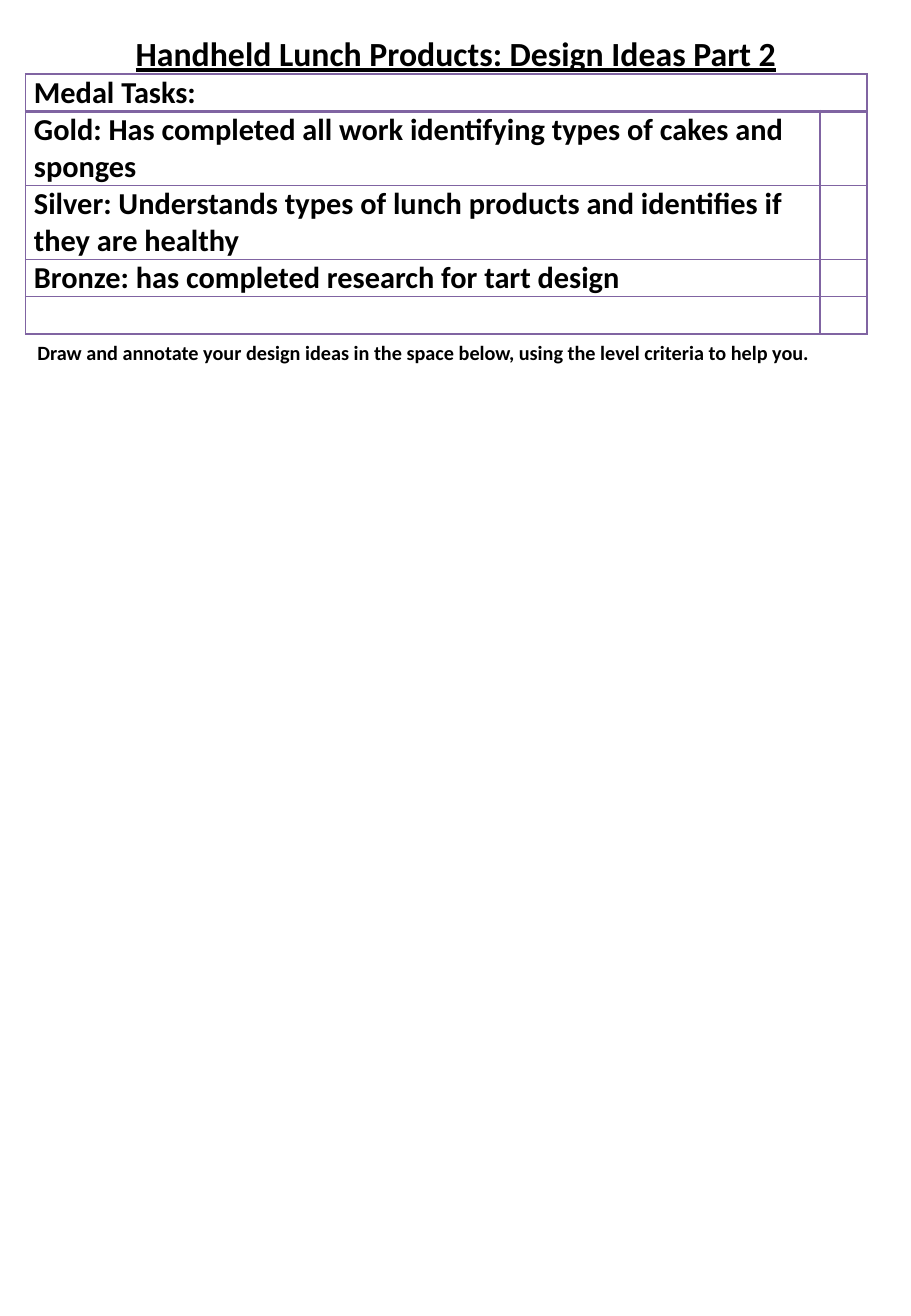
"""Build a worksheet page with a medal task table and room for design ideas."""
from lxml.etree import SubElement
from pptx import Presentation
from pptx.dml.color import RGBColor
from pptx.enum.text import MSO_ANCHOR, MSO_AUTO_SIZE, PP_ALIGN
from pptx.oxml.ns import qn
from pptx.util import Pt

TITLE = "Handheld Lunch Products: Design Ideas Part 2"
HEAD = "Medal Tasks:"
TASKS = [
    "Gold: Has completed all work identifying types of cakes and sponges",
    "Silver: Understands types of lunch products and identifies if they are healthy",
    "Bronze: has completed research for tart design",
    "",
]
NOTE = ("Draw and annotate your design ideas in the space below, "
        "using the level criteria to help you.")

PX = 9144
PAGE = (750, 1083)
BOXES = {"title": (21, 22, 709, 39), "table": (21, 61, 693, 210),
         "note": (21, 275, 709, 40)}
COLS = (654, 39)
ROWS = (28, 56, 56, 28, 28)
PAD = 7
THEME = {"font": "Calibri", "ink": "000000", "paper": "FFFFFF", "rule": "8064A2",
         "title": 20, "task": 18, "note": 12, "thin": 1, "thick": 2}


def place(name):
    return [n * PX for n in BOXES[name]]


def assign(item, **form):
    for key, value in form.items():
        setattr(item, key, value)


def write(frame, text, size, line=False, align=PP_ALIGN.LEFT):
    para = frame.paragraphs[0]
    para.alignment = align
    run = para.add_run()
    run.text = text
    assign(run.font, name=THEME["font"], size=Pt(THEME[size]), bold=True,
           underline=line)
    run.font.color.rgb = RGBColor.from_string(THEME["ink"])


def border(cell, widths):
    props = cell._tc.get_or_add_tcPr()
    for side, width in zip("LRTB", widths):
        edge = SubElement(props, qn(f"a:ln{side}"), w=str(Pt(THEME[width])))
        fill = SubElement(edge, qn("a:solidFill"))
        SubElement(fill, qn("a:srgbClr"), val=THEME["rule"])


def add_tasks(slide):
    frame = slide.shapes.add_table(len(ROWS), len(COLS), *place("table"))
    table = frame.table
    assign(table, first_row=False, horz_banding=False)
    for col, width in zip(table.columns, COLS):
        col.width = width * PX
    for row, height in zip(table.rows, ROWS):
        row.height = height * PX
    table.cell(0, 0).merge(table.cell(0, 1))
    for i, text in enumerate([HEAD, *TASKS]):
        for cell in table.rows[i].cells:
            top = "thick" if i == 1 else "thin"
            base = "thick" if i == 0 else "thin"
            border(cell, ("thin", "thin", top, base))
            cell.fill.solid()
            cell.fill.fore_color.rgb = RGBColor.from_string(THEME["paper"])
            assign(cell, margin_left=PAD * PX, margin_right=PAD * PX,
                   margin_top=0, margin_bottom=0,
                   vertical_anchor=MSO_ANCHOR.MIDDLE)
        if text:
            write(table.cell(i, 0).text_frame, text, "task")


def main():
    deck = Presentation()
    assign(deck, slide_width=PAGE[0] * PX, slide_height=PAGE[1] * PX)
    slide = deck.slides.add_slide(deck.slide_layouts[5])
    title = slide.shapes.title
    assign(title, **dict(zip(("left", "top", "width", "height"), place("title"))))
    note = slide.shapes.add_textbox(*place("note"))
    for shape in (title, note):
        assign(shape.text_frame, word_wrap=True, auto_size=MSO_AUTO_SIZE.NONE,
               vertical_anchor=MSO_ANCHOR.TOP)
    write(title.text_frame, TITLE, "title", True, PP_ALIGN.CENTER)
    write(note.text_frame, NOTE, "note")
    add_tasks(slide)
    deck.save("out.pptx")


if __name__ == "__main__":
    main()
